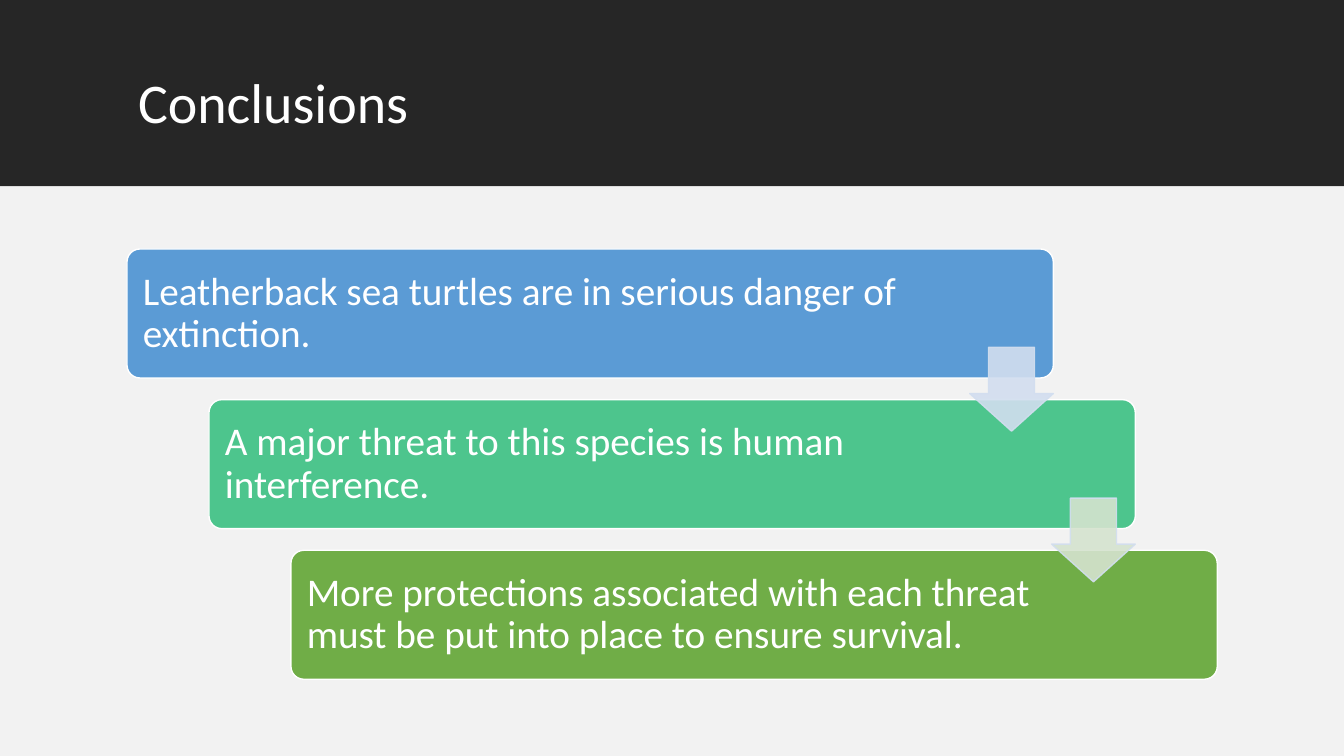
"""Build the Conclusions slide: three staggered steps linked by down arrows."""
from dataclasses import dataclass

from lxml import etree
from pptx import Presentation
from pptx.dml.color import RGBColor
from pptx.enum import shapes, text
from pptx.oxml import ns
from pptx.util import Pt

FONT = "Calibri"
WHITE = RGBColor(0xFF, 0xFF, 0xFF)
CHARCOAL = RGBColor(0x26, 0x26, 0x26)
PALE_GREY = RGBColor(0xF2, 0xF2, 0xF2)
BLUE = RGBColor(0x5B, 0x9B, 0xD5)
MINT = RGBColor(0x4D, 0xC5, 0x8D)
GREEN = RGBColor(0x70, 0xAD, 0x47)
PALE_BLUE = RGBColor(0xD2, 0xDE, 0xEF)
PALE_GREEN = RGBColor(0xD5, 0xE3, 0xCF)

PAGE_WIDTH, PAGE_HEIGHT, HEADER_HEIGHT = 960, 540, 133.2
STEP_LEFT, STEP_TOP, STEP_WIDTH, STEP_HEIGHT = 90.72, 177.84, 661.68, 92.16
SHIFT_X, SHIFT_Y = 58.55, 107.6
ARROW_LEFT, ARROW_TOP, ARROW_SIZE = 692.64, 248.2, 59.8
INSET = 8.64


@dataclass(frozen=True)
class Step:
    wording: str
    fill: RGBColor
    right_inset: float


STEPS = [
    Step("Leatherback sea turtles are in serious danger of extinction.", BLUE, 102),
    Step("A major threat to this species is human interference.", MINT, 127),
    Step("More protections associated with each threat must be put into place to ensure survival.",
         GREEN, 127),
]
ARROW_FILLS = [PALE_BLUE, PALE_GREEN]


def add_box(page, kind, left: float, top: float, width: float, height: float, fill: RGBColor):
    """Add a flat filled shape without an outline."""
    box = page.shapes.add_shape(kind, Pt(left), Pt(top), Pt(width), Pt(height))
    box.shadow.inherit = False
    box.fill.solid()
    box.fill.fore_color.rgb = fill
    box.line.fill.background()
    return box


def set_outline(box, color: RGBColor) -> None:
    """Give a shape a one-point outline."""
    box.line.color.rgb = color
    box.line.width = Pt(1)


def write(box, wording: str, size: float) -> None:
    """Write one left-aligned white paragraph."""
    box.text_frame.text = wording
    para = box.text_frame.paragraphs[0]
    para.alignment = text.PP_ALIGN.LEFT
    para.line_spacing = 0.9
    span = para.runs[0]
    span.font.name = FONT
    span.font.size = Pt(size)
    span.font.color.rgb = WHITE


def add_backdrop(page) -> None:
    """Put the dark header and the pale body behind everything else."""
    bands = [(0, HEADER_HEIGHT, CHARCOAL),
             (HEADER_HEIGHT, PAGE_HEIGHT - HEADER_HEIGHT, PALE_GREY)]
    for index, (top, height, fill) in enumerate(bands):
        band = add_box(page, shapes.MSO_SHAPE.RECTANGLE, 0, top, PAGE_WIDTH, height, fill)
        page.shapes._spTree.insert(2 + index, band._element)


def add_title(page, wording: str) -> None:
    """Place and format the title placeholder."""
    title = page.shapes.title
    title.left, title.top, title.width, title.height = Pt(91.44), Pt(50.4), Pt(778.3), Pt(70.56)
    title.text_frame.vertical_anchor = text.MSO_ANCHOR.TOP
    title.text_frame.auto_size = text.MSO_AUTO_SIZE.NONE
    write(title, wording, 40)


def add_step(page, index: int, step: Step) -> None:
    """Add one rounded step, shifted right and down by its index."""
    box = add_box(page, shapes.MSO_SHAPE.ROUNDED_RECTANGLE, STEP_LEFT + index * SHIFT_X,
                  STEP_TOP + index * SHIFT_Y, STEP_WIDTH, STEP_HEIGHT, step.fill)
    box.adjustments[0] = 0.1
    set_outline(box, WHITE)
    frame = box.text_frame
    frame.word_wrap = True
    frame.vertical_anchor = text.MSO_ANCHOR.MIDDLE
    frame.margin_left = frame.margin_top = frame.margin_bottom = Pt(INSET)
    frame.margin_right = Pt(step.right_inset)
    write(box, step.wording, 28)


def add_arrow(page, index: int, fill: RGBColor) -> None:
    """Add a slightly transparent arrow from one step to the next."""
    arrow = add_box(page, shapes.MSO_SHAPE.DOWN_ARROW, ARROW_LEFT + index * SHIFT_X,
                    ARROW_TOP + index * SHIFT_Y, ARROW_SIZE, ARROW_SIZE, fill)
    arrow.adjustments[0] = 0.55
    arrow.adjustments[1] = 0.45
    set_outline(arrow, PALE_BLUE)
    for color in arrow._element.spPr.iter(ns.qn("a:srgbClr")):
        etree.SubElement(color, ns.qn("a:alpha"), val="90000")


def main() -> None:
    """Build and save the deck."""
    deck = Presentation()
    deck.slide_width, deck.slide_height = Pt(PAGE_WIDTH), Pt(PAGE_HEIGHT)
    page = deck.slides.add_slide(deck.slide_layouts.get_by_name("Title Only"))
    add_backdrop(page)
    add_title(page, "Conclusions")
    for index, step in enumerate(STEPS):
        add_step(page, index, step)
    for index, fill in enumerate(ARROW_FILLS):
        add_arrow(page, index, fill)
    deck.save("out.pptx")


if __name__ == "__main__":
    main()
